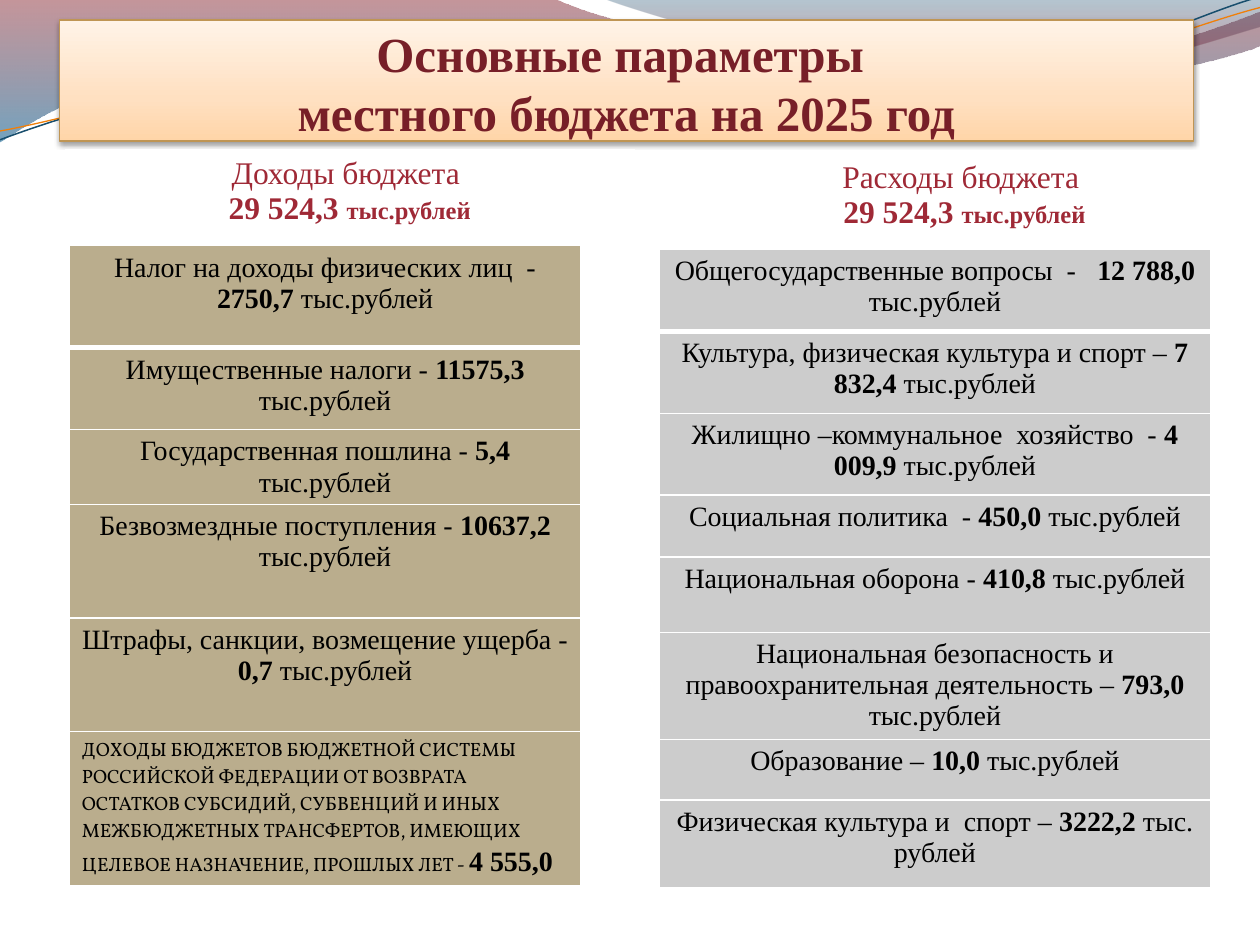
from dataclasses import dataclass

from lxml import etree
from pptx import Presentation
from pptx.dml.color import RGBColor
from pptx.enum.text import MSO_ANCHOR, PP_ALIGN
from pptx.oxml.ns import qn
from pptx.util import Cm, Pt

CENTER, LEFT = PP_ALIGN.CENTER, PP_ALIGN.LEFT
BOTTOM = MSO_ANCHOR.BOTTOM
CM_PER_INCH = 2.54


def inch(value):
    return Cm(value * CM_PER_INCH)


def child(parent, tag, **attributes):
    element = etree.SubElement(parent, qn(tag))
    for name, value in attributes.items():
        element.set(name, str(value))
    return element


@dataclass(frozen=True)
class Theme:
    font: str = "Times New Roman"
    note_font: str = "Vollkorn"
    title: str = "771F28"
    heading: str = "9F2936"
    text: str = "000000"
    border: str = "FFFFFF"
    shadow: str = "000000"
    income: str = "BAAD8D"
    spending: str = "CCCCCC"
    frame: str = "BF9554"
    wave_blue: str = "184E6D"
    wave_orange: str = "F07F09"
    title_size: int = 28
    heading_size: int = 18
    unit_size: int = 14
    cell_size: int = 16
    note_size: int = 11
    left_wave: tuple = ((0, "7E1621", 45), (100, "005689", 55))
    right_wave: tuple = ((0, "094467", 30), (80, "A10F1F", 45))
    banner: tuple = ((0, "FFD5A8", 100), (35, "FFE0C1", 100), (100, "FFF3E7", 100))


class SlideBuilder:
    def __init__(self, slide, theme):
        self.slide = slide
        self.theme = theme

    def gradient(self, shape, stops, angle):
        shape.fill.gradient()
        gradient = shape._element.spPr.find(qn("a:gradFill"))
        for element in list(gradient):
            gradient.remove(element)
        stop_list = child(gradient, "a:gsLst")
        for position, color, opacity in stops:
            stop = child(stop_list, "a:gs", pos=position * 1000)
            color_element = child(stop, "a:srgbClr", val=color)
            if opacity < 100:
                child(color_element, "a:alpha", val=opacity * 1000)
        child(gradient, "a:lin", ang=angle * 60000, scaled=0)

    def curve(self, start, segments, stops=None, line=None):
        points = [point for segment in segments for point in zip(segment[::2], segment[1::2])]
        builder = self.slide.shapes.build_freeform(inch(start[0]), inch(start[1]))
        builder.add_line_segments([(inch(x), inch(y)) for x, y in points], close=bool(stops))
        shape = builder.convert_to_shape()
        outline = next(shape._element.iter(qn("a:path")))
        vertices = iter(outline.findall(qn("a:lnTo")))
        for segment in segments:
            vertex = next(vertices)
            if len(segment) == 6:
                vertex.addprevious(bezier := child(outline, "a:cubicBezTo"))
                for corner in (vertex, next(vertices), next(vertices)):
                    bezier.append(corner[0])
                    outline.remove(corner)
        shape.shadow.inherit = False
        if stops:
            self.gradient(shape, stops, 90)
            shape.line.fill.background()
        else:
            color, width = line
            shape.fill.background()
            shape.line.color.rgb = RGBColor.from_string(color)
            shape.line.width = Pt(width)

    def run(self, paragraph, text, size, color, bold=False, font=None):
        run = paragraph.add_run()
        run.text = text
        run.font.name = font or self.theme.font
        run.font.size = Pt(size)
        run.font.bold = bold
        run.font.color.rgb = RGBColor.from_string(color)

    def title(self, lines, left, top, width, height):
        shape = self.slide.shapes.title
        self.slide.shapes._spTree.append(shape._element)
        shape.left, shape.top = inch(left), inch(top)
        shape.width, shape.height = inch(width), inch(height)
        self.gradient(shape, self.theme.banner, 270)
        shape.line.color.rgb = RGBColor.from_string(self.theme.frame)
        shape.line.width = Pt(0.75)
        effects = child(shape._element.spPr, "a:effectLst")
        shadow = child(effects, "a:outerShdw", blurRad=Pt(3.1), dist=Pt(1.6),
                       dir=90 * 60000, rotWithShape=0)
        shadow_color = child(shadow, "a:srgbClr", val=self.theme.shadow)
        child(shadow_color, "a:alpha", val=38000)
        frame = shape.text_frame
        frame.word_wrap = True
        frame.vertical_anchor = BOTTOM
        frame.margin_left = frame.margin_right = frame.margin_bottom = 0
        frame.margin_top = inch(0.05)
        paragraph = frame.paragraphs[0]
        paragraph.alignment = CENTER
        for index, line in enumerate(lines):
            if index:
                paragraph.add_line_break()
            self.run(paragraph, line, self.theme.title_size, self.theme.title, True)

    def table(self, left, top, width, heights):
        shape = self.slide.shapes.add_table(
            len(heights), 1, inch(left), inch(top), inch(width), inch(sum(heights)))
        table = shape.table
        table.first_row = table.horz_banding = False
        table.columns[0].width = inch(width)
        for row, height in zip(table.rows, heights):
            row.height = inch(height)
        return table

    def borders(self, cell, bottom):
        properties = cell._tc.get_or_add_tcPr()
        sides = (("a:lnL", 1), ("a:lnR", 1), ("a:lnT", 1), ("a:lnB", bottom))
        for position, (tag, width) in enumerate(sides):
            line = child(properties, tag, w=Pt(width))
            child(child(line, "a:solidFill"), "a:srgbClr", val=self.theme.border)
            properties.insert(position, line)

    def heading(self, name, amount, left, top, width, height, indents=(0, 0)):
        theme = self.theme
        cell = self.table(left, top, width, [height]).cell(0, 0)
        cell.fill.background()
        first = cell.text_frame.paragraphs[0]
        second = cell.text_frame.add_paragraph()
        self.run(first, name, theme.heading_size, theme.heading)
        self.run(second, amount, theme.heading_size, theme.heading, True)
        self.run(second, "тыс.рублей", theme.unit_size, theme.heading, True)
        for paragraph, indent in zip((first, second), indents):
            paragraph.alignment = CENTER
            paragraph._p.get_or_add_pPr().set("marL", str(inch(indent)))

    def budget(self, rows, heights, color, left, top, width):
        theme = self.theme
        table = self.table(left, top, width, heights)
        for index, (name, amount, unit) in enumerate(rows):
            cell = table.cell(index, 0)
            cell.fill.solid()
            cell.fill.fore_color.rgb = RGBColor.from_string(color)
            self.borders(cell, 1 if index else 3)
            paragraph = cell.text_frame.paragraphs[0]
            paragraph.alignment = CENTER if unit else LEFT
            size, font = ((theme.cell_size, theme.font) if unit
                          else (theme.note_size, theme.note_font))
            self.run(paragraph, name, size, theme.text, font=font)
            self.run(paragraph, amount, theme.cell_size, theme.text, True)
            if unit:
                self.run(paragraph, unit, theme.cell_size, theme.text)


UNIT = "тыс.рублей"
INCOME = [
    ("Налог на доходы физических лиц  - ", "2750,7 ", UNIT),
    ("Имущественные налоги - ", "11575,3 ", UNIT),
    ("Государственная пошлина - ", "5,4 ", UNIT),
    ("Безвозмездные поступления - ", "10637,2 ", UNIT),
    ("Штрафы, санкции, возмещение ущерба - ", "0,7 ", UNIT),
    ("ДОХОДЫ БЮДЖЕТОВ БЮДЖЕТНОЙ СИСТЕМЫ РОССИЙСКОЙ ФЕДЕРАЦИИ ОТ ВОЗВРАТА ОСТАТКОВ "
     "СУБСИДИЙ, СУБВЕНЦИЙ И ИНЫХ МЕЖБЮДЖЕТНЫХ ТРАНСФЕРТОВ, ИМЕЮЩИХ ЦЕЛЕВОЕ "
     "НАЗНАЧЕНИЕ, ПРОШЛЫХ ЛЕТ - ", "4 555,0", ""),
]
SPENDING = [
    ("Общегосударственные вопросы  -   ", "12 788,0 ", UNIT),
    ("Культура, физическая культура и спорт – ", "7 832,4 ", UNIT),
    ("Жилищно –коммунальное  хозяйство  - ", "4 009,9 ", UNIT),
    ("Социальная политика  - ", "450,0", " " + UNIT),
    ("Национальная оборона - ", "410,8 ", UNIT),
    ("Национальная безопасность и правоохранительная деятельность – ", "793,0 ", UNIT),
    ("Образование – ", "10,0", " " + UNIT),
    ("Физическая культура и  спорт – ", "3222,2", " тыс. рублей"),
]


def main():
    presentation = Presentation()
    presentation.slide_width, presentation.slide_height = inch(10), inch(7.5)
    theme = Theme()
    builder = SlideBuilder(
        presentation.slides.add_slide(presentation.slide_layouts[5]), theme)
    builder.curve((0, 0), [
        (4.4, -0.01), (4.76, 0.17, 6.64, 0.63, 7.58, 0.63),
        (8.53, 0.63, 9.58, 0.26, 10, 0.09), (10.01, 0.36),
        (9.83, 0.44, 8.7, 0.76, 7.46, 0.75), (6.22, 0.75, 3.82, 0.28, 2.57, 0.34),
        (1.29, 0.36, 0.46, 0.83, -0.01, 1.13)], stops=theme.left_wave)
    builder.curve((4.79, -0.01), [
        (5.09, 0.11, 6.82, 0.62, 7.69, 0.65), (8.56, 0.69, 9.61, 0.32, 10, 0.21),
        (10, 0)], stops=theme.right_wave)
    builder.curve((0, 1.11), [
        (0.48, 0.93, 1.58, 0.57, 2.77, 0.52), (3.95, 0.47, 5.93, 0.89, 7.13, 0.8),
        (8.33, 0.71, 9.38, 0.15, 9.98, -0.02)], line=(theme.wave_blue, 0.85))
    builder.curve((0, 1.04), [
        (0.47, 0.96, 1.64, 0.61, 2.83, 0.56), (4.03, 0.51, 5.97, 0.84, 7.17, 0.75),
        (8.36, 0.67, 9.41, 0.21, 10, 0.06)], line=(theme.wave_orange, 0.75))
    builder.title(["Основные параметры ", "местного бюджета на 2025 год"], 0.47, 0.16, 9, 0.96)
    builder.heading("Доходы бюджета ", "29 524,3 ", 0.52, 1.19, 4.51, 0.77)
    builder.heading("Расходы бюджета", "29 524,3 ", 5.14, 1.22, 4.47, 0.76, (0.5, 0.56))
    builder.budget(INCOME, [0.81, 0.65, 0.59, 0.9, 0.9, 0.9], theme.income, 0.55, 1.95, 4.06)
    builder.budget(SPENDING, [0.65, 0.65, 0.65, 0.49, 0.6, 0.85, 0.48, 0.7],
                   theme.spending, 5.23, 1.98, 4.38)
    presentation.save("out.pptx")


if __name__ == "__main__":
    main()
